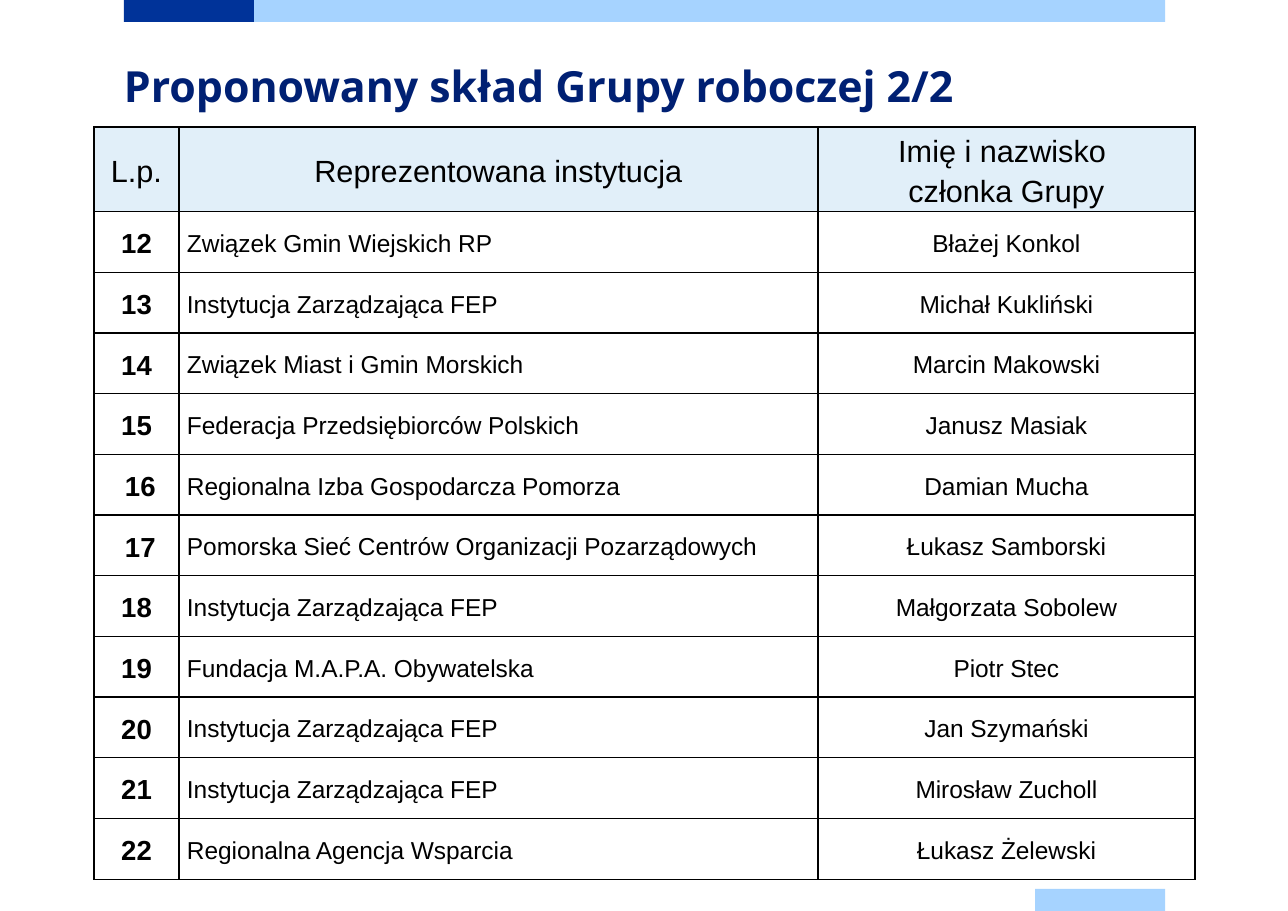
"""Build the slide listing the second half of the proposed working group."""
from lxml.etree import SubElement
from pptx import Presentation
from pptx.dml.color import RGBColor
from pptx.enum.shapes import MSO_SHAPE
from pptx.enum.text import MSO_ANCHOR, PP_ALIGN
from pptx.oxml.ns import qn
from pptx.util import Emu, Pt

COLORS = {
    "navy": "003399",
    "sky": "A6D3FF",
    "title": "002073",
    "header": "E1EFF9",
    "text": "000000",
    "border": "000000",
}
TITLE = "Proponowany skład Grupy roboczej 2/2"
HEADER = ("L.p.", "Reprezentowana instytucja", "Imię i nazwisko \nczłonka Grupy")
MEMBERS = [
    ("12", "Związek Gmin Wiejskich RP", "Błażej Konkol"),
    ("13", "Instytucja Zarządzająca FEP", "Michał Kukliński"),
    ("14", "Związek Miast i Gmin Morskich", "Marcin Makowski"),
    ("15", "Federacja Przedsiębiorców Polskich", "Janusz Masiak"),
    (" 16", "Regionalna Izba Gospodarcza Pomorza", "Damian Mucha"),
    (" 17", "Pomorska Sieć Centrów Organizacji Pozarządowych", "Łukasz Samborski"),
    ("18", "Instytucja Zarządzająca FEP", "Małgorzata Sobolew"),
    ("19", "Fundacja M.A.P.A. Obywatelska", "Piotr Stec"),
    ("20", "Instytucja Zarządzająca FEP", "Jan Szymański"),
    ("21", "Instytucja Zarządzająca FEP", "Mirosław Zucholl"),
    ("22", "Regionalna Agencja Wsparcia", "Łukasz Żelewski"),
]
BARS = [
    (124, 0, 130, 22, "navy"),
    (254, 0, 911, 22, "sky"),
    (1035, 889, 130, 22, "sky"),
]
TITLE_BOX = (124, 56, 1041, 69)
TABLE_LEFT, TABLE_TOP = 94, 127
COLUMN_WIDTHS = (85, 639, 377)
HEADER_HEIGHT, BODY_HEIGHT = 65, 668
HEADER_STYLE = (20, False, PP_ALIGN.CENTER, 0, 7)
COLUMN_STYLES = (
    (18, True, PP_ALIGN.CENTER, 6, 7),
    (16, False, PP_ALIGN.JUSTIFY, 0, 8),
    (16, False, PP_ALIGN.CENTER, 0, 8),
)
EMU_PER_PX = 8298


def px(length):
    return Emu(round(length * EMU_PER_PX))


def color(name):
    return RGBColor.from_string(COLORS[name])


def add_run(paragraph, text, font_name, size, bold, color_name):
    run = paragraph.add_run()
    run.text = text
    run.font.name = font_name
    run.font.size = Pt(size)
    run.font.bold = bold
    run.font.color.rgb = color(color_name)


def add_bar(slide, left, top, width, height, fill):
    shape = slide.shapes.add_shape(MSO_SHAPE.RECTANGLE, px(left), px(top), px(width), px(height))
    shape.shadow.inherit = False
    shape.fill.solid()
    shape.fill.fore_color.rgb = color(fill)
    shape.line.fill.background()


def add_title(slide):
    frame = slide.shapes.add_textbox(*map(px, TITLE_BOX)).text_frame
    frame.word_wrap = True
    frame.margin_left = frame.margin_top = frame.margin_right = frame.margin_bottom = 0
    paragraph = frame.paragraphs[0]
    paragraph.line_spacing = Pt(36)
    add_run(paragraph, TITLE, "Open Sans", 28, True, "title")


def add_borders(cell):
    properties = cell._tc.get_or_add_tcPr()
    for index, side in enumerate(("lnL", "lnR", "lnT", "lnB")):
        line = properties.makeelement(qn(f"a:{side}"), {"w": str(Pt(1))})
        fill = SubElement(line, qn("a:solidFill"))
        SubElement(fill, qn("a:srgbClr"), val=COLORS["border"])
        properties.insert(index, line)


def fill_cell(cell, text, style, fill=None):
    size, bold, alignment, space_after, margin = style
    if fill:
        cell.fill.solid()
        cell.fill.fore_color.rgb = color(fill)
    else:
        cell.fill.background()
    add_borders(cell)
    cell.vertical_anchor = MSO_ANCHOR.MIDDLE
    cell.margin_left = cell.margin_right = px(margin)
    cell.margin_top = cell.margin_bottom = 0
    paragraph = cell.text_frame.paragraphs[0]
    paragraph.alignment = alignment
    paragraph.line_spacing = 1.15
    paragraph.space_after = Pt(space_after)
    for number, line in enumerate(text.split("\n")):
        if number:
            paragraph.add_line_break()
        add_run(paragraph, line, "Arial", size, bold, "text")


def add_members_table(slide):
    table = slide.shapes.add_table(
        len(MEMBERS) + 1, len(HEADER), px(TABLE_LEFT), px(TABLE_TOP),
        px(sum(COLUMN_WIDTHS)), px(HEADER_HEIGHT + BODY_HEIGHT),
    ).table
    table.horz_banding = False
    for column, width in zip(table.columns, COLUMN_WIDTHS):
        column.width = px(width)
    for row in table.rows:
        row.height = px(BODY_HEIGHT / len(MEMBERS))
    table.rows[0].height = px(HEADER_HEIGHT)
    for column, text in enumerate(HEADER):
        fill_cell(table.cell(0, column), text, HEADER_STYLE, "header")
    for row, member in enumerate(MEMBERS, 1):
        for column, text in enumerate(member):
            fill_cell(table.cell(row, column), text, COLUMN_STYLES[column])


def main():
    presentation = Presentation()
    presentation.slide_width, presentation.slide_height = px(1288), px(911)
    slide = presentation.slides.add_slide(presentation.slide_layouts[6])
    for bar in BARS:
        add_bar(slide, *bar)
    add_title(slide)
    add_members_table(slide)
    presentation.save("out.pptx")


if __name__ == "__main__":
    main()
